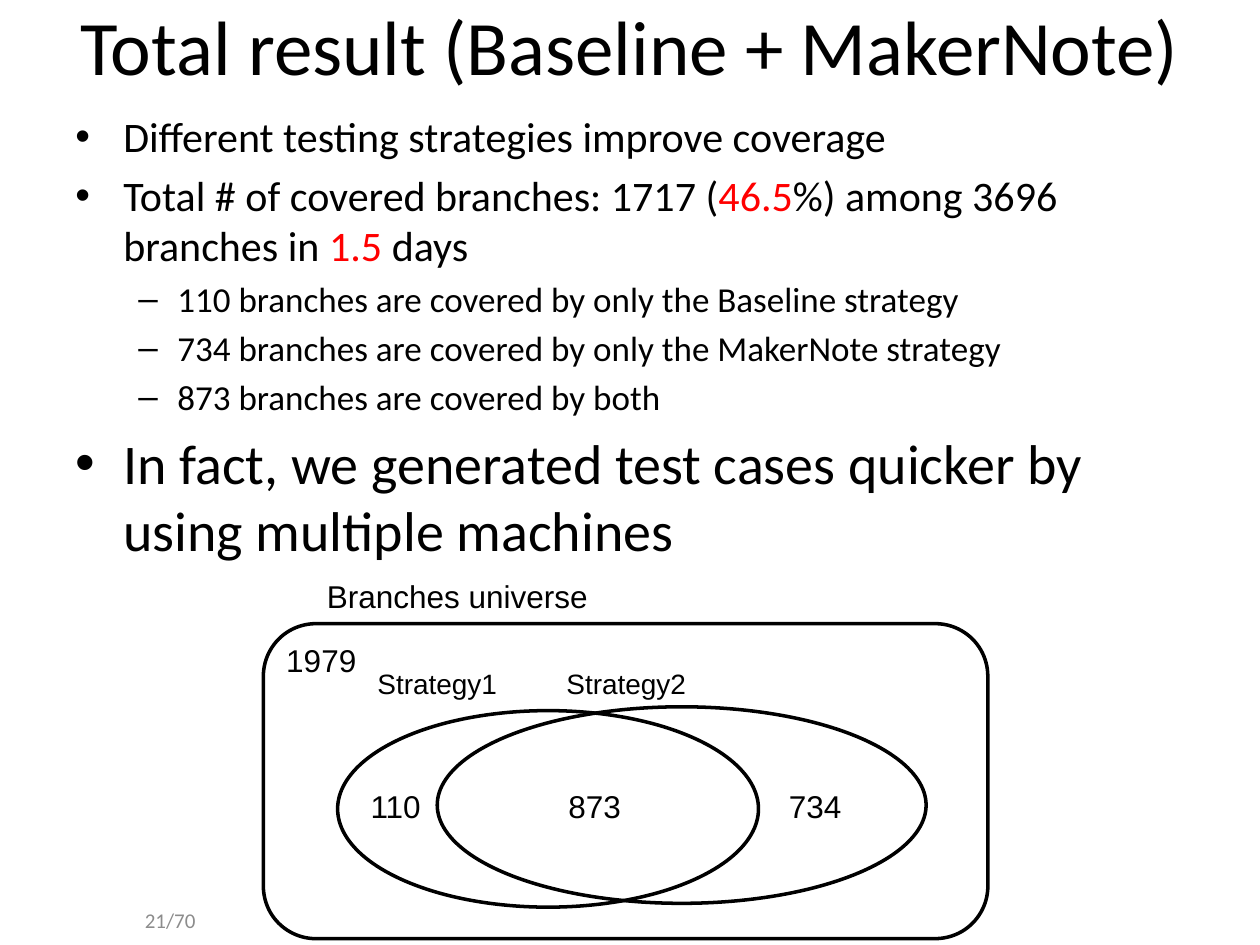
from lxml.etree import SubElement
from pptx import Presentation
from pptx.dml.color import RGBColor
from pptx.enum.shapes import MSO_SHAPE as Preset
from pptx.enum.text import MSO_ANCHOR as Anchor, PP_ALIGN as Align
from pptx.oxml.ns import qn
from pptx.util import Inches, Pt

BLACK = RGBColor(0, 0, 0)
RED = RGBColor(255, 0, 0)
GRAY = RGBColor(0x8C, 0x8C, 0x8C)


class SlideBuilder:
    """Draws text, bullet lists and outlines on one page in a shared style."""

    heading_font = "Calibri"
    label_font = "Arial"
    levels = {0: ("•", 0.38, 0.38), 1: ("–", 0.81, 0.31)}

    def __init__(self, page):
        self.page = page

    def frame(self, left, top, width, height, anchor=Anchor.TOP):
        box = self.page.shapes.add_textbox(
            Inches(left), Inches(top), Inches(width), Inches(height))
        box.text_frame.word_wrap = True
        box.text_frame.vertical_anchor = anchor
        return box.text_frame

    def style(self, para, size, font, color=BLACK):
        para.font.size = Pt(size)
        para.font.name = font
        para.font.color.rgb = color

    def text(self, words, place, size, font=label_font, color=BLACK,
             align=Align.CENTER, anchor=Anchor.TOP):
        para = self.frame(*place, anchor).paragraphs[0]
        para.text = words
        para.alignment = align
        self.style(para, size, font, color)

    def bullets(self, items, place):
        frame = self.frame(*place)
        for index, (level, size, spans) in enumerate(items):
            para = frame.add_paragraph() if index else frame.paragraphs[0]
            para.level = level
            mark, margin, hanging = self.levels[level]
            properties = para._p.get_or_add_pPr()
            properties.set("marL", str(Inches(margin)))
            properties.set("indent", str(-Inches(hanging)))
            SubElement(properties, qn("a:buFont")).set("typeface", "Arial")
            SubElement(properties, qn("a:buChar")).set("char", mark)
            if index:
                para.space_before = Pt(size * 0.2)
            self.style(para, size, self.heading_font)
            for words, color in spans:
                span = para.add_run()
                span.text = words
                if color != BLACK:
                    span.font.color.rgb = color

    def outline(self, preset, left, top, width, height):
        shape = self.page.shapes.add_shape(
            preset, Inches(left), Inches(top), Inches(width), Inches(height))
        shape.shadow.inherit = False
        shape.fill.background()
        shape.line.color.rgb = BLACK
        shape.line.width = Pt(2)


def main():
    deck = Presentation()
    deck.slide_width, deck.slide_height = Inches(10), Inches(7.5)
    slide = SlideBuilder(deck.slides.add_slide(deck.slide_layouts[6]))

    slide.text("21/70", (0.67, 7.1, 0.98, 0.4), 12, slide.heading_font, GRAY,
               Align.RIGHT, Anchor.MIDDLE)
    slide.text("Total result (Baseline + MakerNote)", (0.5, -0.27, 9, 1.25), 44,
               slide.heading_font, anchor=Anchor.MIDDLE)

    slide.bullets([
        (0, 24, [("Different testing strategies improve coverage", BLACK)]),
        (0, 24, [("Total # of covered branches: 1717 (", BLACK), ("46.5", RED),
                 ("%) among 3696 branches in ", BLACK), ("1.5", RED),
                 (" days", BLACK)]),
        (1, 20, [("110 branches are covered by only the Baseline strategy", BLACK)]),
        (1, 20, [("734 branches are covered by only the MakerNote strategy", BLACK)]),
        (1, 20, [("873 branches are covered by both", BLACK)]),
        (0, 32, [("In fact, we generated test cases quicker by using "
                  "multiple machines", BLACK)]),
    ], (0.5, 0.83, 8.58, 2.07))

    slide.outline(Preset.ROUNDED_RECTANGLE, 2.09, 4.95, 5.75, 2.5)
    slide.outline(Preset.OVAL, 2.68, 5.64, 3.34, 1.56)
    slide.outline(Preset.OVAL, 3.47, 5.61, 3.88, 1.56)

    for count, left in (("110", 2.68), ("873", 4.26), ("734", 6.01)):
        slide.text(count, (left, 6.2, 0.92, 0.4), 18)
    slide.text("1979", (1.93, 5.04, 1.24, 0.4), 18)
    slide.text("Branches universe", (2.09, 4.53, 3.08, 0.4), 18)
    for name, left in (("Strategy1", 2.76), ("Strategy2", 4.26)):
        slide.text(name, (left, 5.24, 1.42, 0.37), 16)

    deck.save("out.pptx")


if __name__ == "__main__":
    main()
